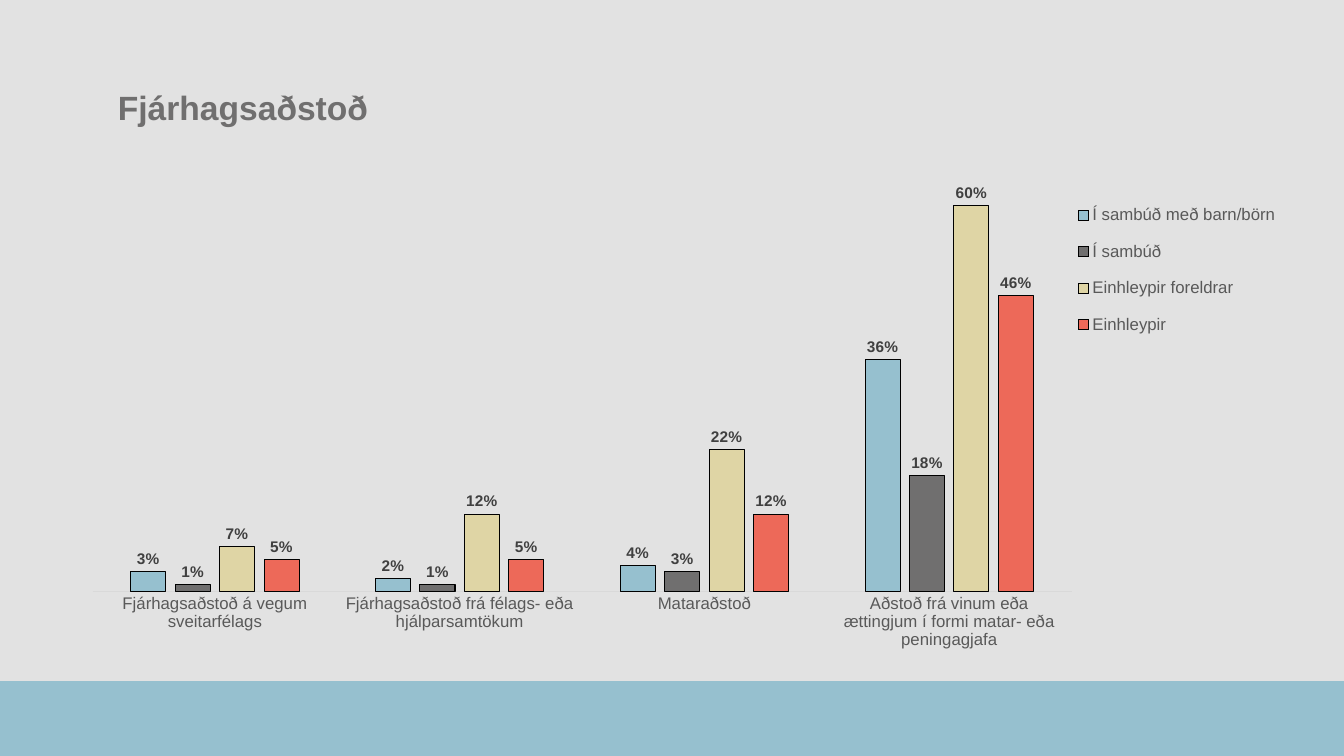
from lxml.etree import SubElement
from pptx import Presentation
from pptx.chart.data import CategoryChartData
from pptx.dml.color import RGBColor
from pptx.enum.chart import (XL_CHART_TYPE, XL_LABEL_POSITION, XL_LEGEND_POSITION,
                             XL_TICK_MARK)
from pptx.enum.shapes import MSO_SHAPE
from pptx.enum.text import MSO_ANCHOR, MSO_AUTO_SIZE, PP_ALIGN
from pptx.oxml.ns import qn
from pptx.util import Pt

FONT = "Arial"
BLUE, GREY = "96C0CF", "706F6F"

AID_TYPES = [
    "Fjárhagsaðstoð á vegum sveitarfélags",
    "Fjárhagsaðstoð frá félags- eða hjálparsamtökum",
    "Mataraðstoð",
    "Aðstoð frá vinum eða ættingjum í formi matar- eða peningagjafa",
]
HOUSEHOLDS = [
    ("Í sambúð með barn/börn", BLUE, (0.03, 0.02, 0.04, 0.36)),
    ("Í sambúð", GREY, (0.01, 0.01, 0.03, 0.18)),
    ("Einhleypir foreldrar", "DFD5A5", (0.07, 0.12, 0.22, 0.6)),
    ("Einhleypir", "ED6959", (0.05, 0.05, 0.12, 0.46)),
]


def color(hex_code):
    return RGBColor.from_string(hex_code)


def style_font(font, size, hex_code, bold=False):
    font.name = FONT
    font.size = Pt(size)
    font.bold = bold
    font.color.rgb = color(hex_code)


def place(shape, left, top, width, height):
    shape.left, shape.top = Pt(left), Pt(top)
    shape.width, shape.height = Pt(width), Pt(height)


def set_layout(parent, index, x, y, w, h, inner=False):
    """Fix the place of a chart part, as fractions of the chart."""
    for automatic in parent.findall(qn("c:layout")):
        parent.remove(automatic)
    layout = SubElement(parent, qn("c:layout"))
    parent.insert(index, layout)
    manual = SubElement(layout, qn("c:manualLayout"))
    settings = [("layoutTarget", "inner")] if inner else []
    settings += [("xMode", "edge"), ("yMode", "edge"),
                 ("x", x), ("y", y), ("w", w), ("h", h)]
    for tag, value in settings:
        SubElement(manual, qn(f"c:{tag}")).set("val", str(value))


def add_title(slide, text):
    title = slide.shapes.title
    place(title, 77, 54, 737.5, 49)
    frame = title.text_frame
    frame.text = text
    frame.word_wrap = True
    frame.auto_size = MSO_AUTO_SIZE.NONE
    frame.vertical_anchor = MSO_ANCHOR.MIDDLE
    heading = frame.paragraphs[0]
    heading.alignment = PP_ALIGN.LEFT
    heading.line_spacing = 0.9
    style_font(heading.font, 24, GREY, bold=True)


def add_footer_band(slide):
    band = slide.shapes.add_shape(MSO_SHAPE.RECTANGLE, Pt(0), Pt(486.5), Pt(960), Pt(53.5))
    band.shadow.inherit = False
    band.fill.solid()
    band.fill.fore_color.rgb = color(BLUE)
    band.line.fill.background()


def style_axes(chart):
    aid_axis = chart.category_axis
    aid_axis.major_tick_mark = XL_TICK_MARK.NONE
    aid_axis.format.line.color.rgb = color("D9D9D9")
    aid_axis.format.line.width = Pt(0.75)
    style_font(aid_axis.tick_labels.font, 12, "595959")

    share_axis = chart.value_axis
    share_axis.minimum_scale, share_axis.maximum_scale = 0, 0.7
    share_axis.has_major_gridlines = False
    share_axis.visible = False


def style_household(household, fill):
    household.format.fill.solid()
    household.format.fill.fore_color.rgb = color(fill)
    household.format.line.color.rgb = color("000000")
    household.format.line.width = Pt(0.75)
    household.invert_if_negative = False
    labels = household.data_labels
    labels.show_value = True
    labels.number_format = "0%"
    labels.number_format_is_linked = False
    labels.position = XL_LABEL_POSITION.OUTSIDE_END
    style_font(labels.font, 11, "404040", bold=True)


def add_aid_chart(slide):
    shares = CategoryChartData(number_format="0%")
    shares.categories = AID_TYPES
    for name, _, values in HOUSEHOLDS:
        shares.add_series(name, values)
    chart = slide.shapes.add_chart(XL_CHART_TYPE.COLUMN_CLUSTERED, Pt(54), Pt(88.5),
                                   Pt(864.5), Pt(379.5), shares).chart
    chart.has_title = False
    style_font(chart.font, 10, "000000")
    style_axes(chart)

    # Columns
    columns = chart.plots[0]
    columns.gap_width, columns.overlap = 219, -27
    columns.vary_by_categories = False
    for household, (_, fill, _) in zip(columns.series, HOUSEHOLDS):
        style_household(household, fill)

    # Legend, stacked at the right of the columns
    chart.has_legend = True
    chart.legend.position = XL_LEGEND_POSITION.BOTTOM
    chart.legend.include_in_layout = False
    style_font(chart.legend.font, 12, "595959")

    chart_xml = chart.element.find(qn("c:chart"))
    set_layout(chart_xml.find(qn("c:plotArea")), 0, 0.014, 0.032, 0.809, 0.848, inner=True)
    set_layout(chart_xml.find(qn("c:legend")), 1, 0.82, 0.12, 0.18, 0.31)


def main():
    deck = Presentation()
    deck.slide_width, deck.slide_height = Pt(960), Pt(540)
    slide = deck.slides.add_slide(deck.slide_layouts.get_by_name("Title Only"))
    slide.background.fill.solid()
    slide.background.fill.fore_color.rgb = color("E2E2E2")
    add_footer_band(slide)
    add_title(slide, "Fjárhagsaðstoð")
    add_aid_chart(slide)
    deck.save("out.pptx")


if __name__ == "__main__":
    main()
